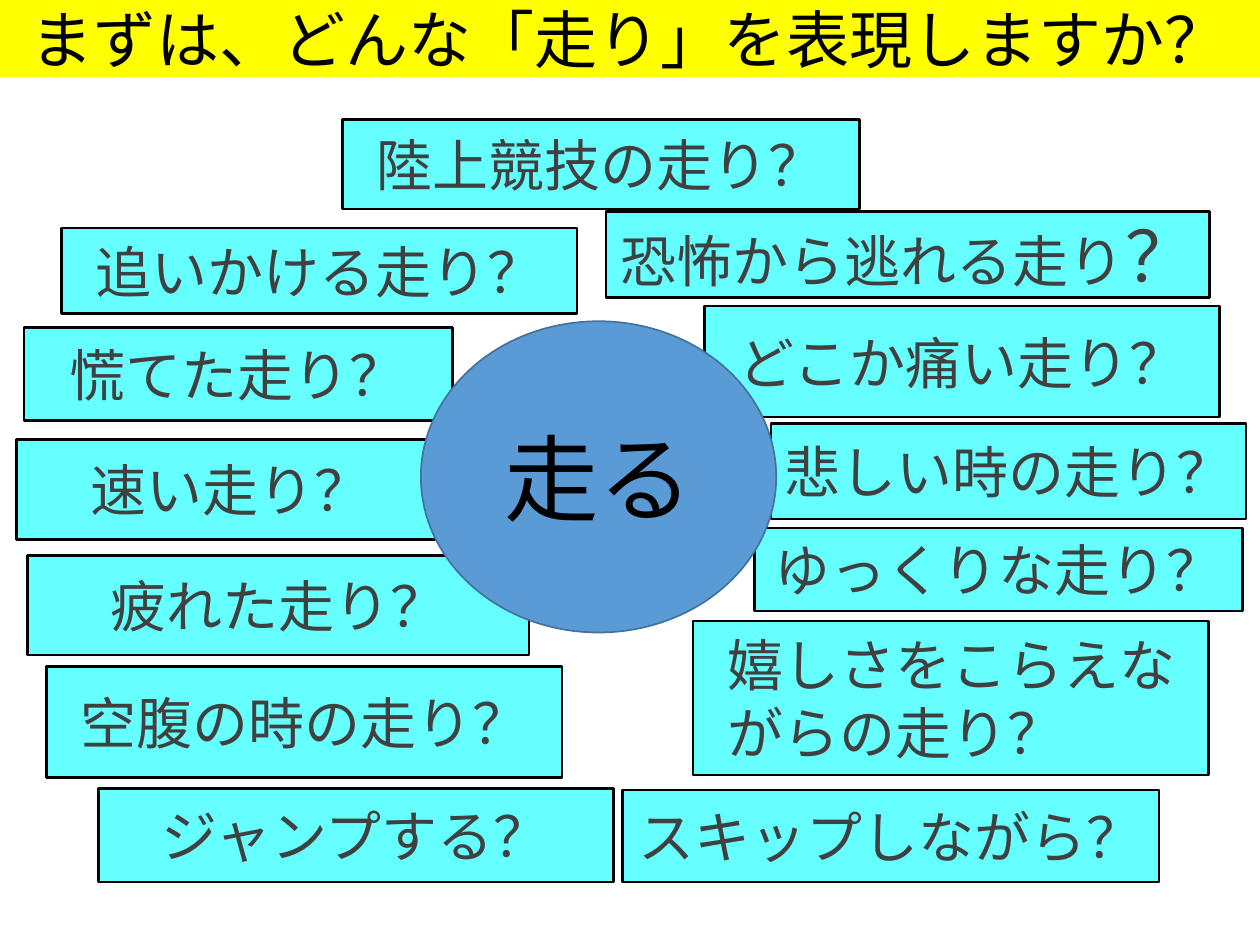
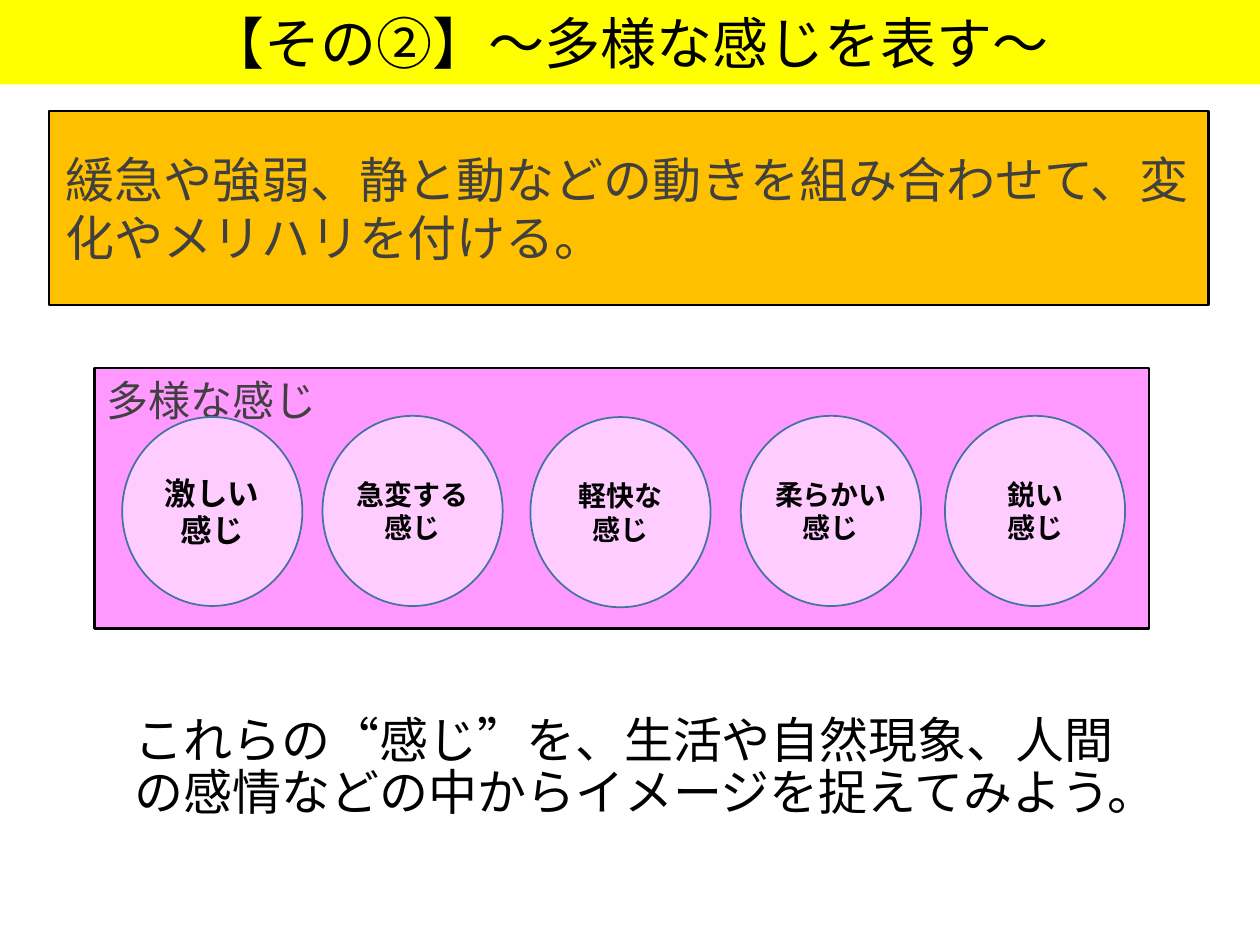
from lxml import etree
from pptx import Presentation
from pptx import util as u
from pptx.dml.color import RGBColor
from pptx.enum import shapes, text
from pptx.oxml.ns import qn

FONT = "Noto Sans CJK JP"
BLACK, GREY = "000000", "404040"
YELLOW, CYAN, BLUE, BLUE_LINE = "FFFF00", "66FFFF", "5B9BD5", "43739E"
ORANGE, PINK, PALE_PINK = "FFC000", "FF99FF", "FFCCFF"
RECT, OVAL = shapes.MSO_SHAPE.RECTANGLE, shapes.MSO_SHAPE.OVAL
LEFT, CENTER = text.PP_ALIGN.LEFT, text.PP_ALIGN.CENTER
TOP, MIDDLE = text.MSO_ANCHOR.TOP, text.MSO_ANCHOR.MIDDLE


def write(sp, paragraphs, size=32, color=GREY, bold=False, align=CENTER,
          anchor=MIDDLE, before=0, spacing=1.0, insets=(0.1, 0.05, 0.1, 0.05)):
    """Each paragraph is a string or a list of (string, size) runs."""
    tf = sp.text_frame
    tf.word_wrap, tf.auto_size = True, text.MSO_AUTO_SIZE.NONE
    tf.vertical_anchor = anchor
    (tf.margin_left, tf.margin_top,
     tf.margin_right, tf.margin_bottom) = [u.Inches(i) for i in insets]
    for i, runs in enumerate(paragraphs):
        p = tf.add_paragraph() if i else tf.paragraphs[0]
        p.alignment, p.line_spacing = align, spacing
        p.space_before = u.Pt(before)
        for words, run_size in [(runs, size)] if isinstance(runs, str) else runs:
            r = p.add_run()
            r.text = words
            r.font.name, r.font.size, r.font.bold = FONT, u.Pt(run_size), bold
            r.font.color.rgb = RGBColor.from_string(color)
            etree.SubElement(r._r.rPr, qn("a:ea"), typeface=FONT)


def draw(parent, kind, at, fill, line=BLACK, width=1.5):
    sp = parent.add_shape(kind, *[u.Inches(v) for v in at])
    sp.shadow.inherit = False
    sp.fill.solid()
    sp.fill.fore_color.rgb = RGBColor.from_string(fill)
    sp.line.color.rgb = RGBColor.from_string(line)
    sp.line.width = u.Pt(width)
    return sp


prs = Presentation()
prs.slide_width, prs.slide_height = u.Inches(10), u.Inches(7.5)

# Slides with their yellow title bands
slides = []
for layout, title, height, size in [
    (5, "まずは、どんな「走り」を表現しますか？", 0.61, 36),
    (1, "【その②】～多様な感じを表す～", 0.67, 32),
]:
    s = prs.slides.add_slide(prs.slide_layouts[layout])
    sp = s.shapes.title
    sp.left, sp.top = u.Inches(-0.02), u.Inches(0)
    sp.width, sp.height = u.Inches(10.02), u.Inches(height)
    sp.fill.solid()
    sp.fill.fore_color.rgb = RGBColor.from_string(YELLOW)
    write(sp, [title], size=size, color=BLACK, insets=(0.07, 0.04, 0.07, 0.04))
    slides.append(s)
running, feelings = slides

# Slide 1: ways of running around the central theme
for label, at in [
    ("陸上競技の走り？", (2.72, 0.95, 4.1, 0.71)),
    ([("恐怖から逃れる走り", 32), ("？", 40)], (4.81, 1.68, 4.79, 0.68)),
    ("追いかける走り？", (0.49, 1.81, 4.09, 0.68)),
    ("慌てた走り？", (0.19, 2.6, 3.4, 0.74)),
    ("悲しい時の走り？", (6.12, 3.36, 3.77, 0.76)),
    ("どこか痛い走り？", (5.59, 2.43, 4.09, 0.88)),
    ("速い走り？", (0.13, 3.49, 3.4, 0.79)),
    ("ゆっくりな走り？", (5.99, 4.19, 3.87, 0.66)),
    ("疲れた走り？", (0.22, 4.41, 3.98, 0.79)),
    ("ジャンプする？", (0.78, 6.26, 4.09, 0.74)),
    ("空腹の時の走り？", (0.37, 5.29, 4.09, 0.88)),
    ("スキップしながら？", (4.94, 6.27, 4.26, 0.73)),
]:
    write(draw(running.shapes, RECT, at, CYAN), [label], before=10,
          insets=(0.05, 0.05, 0.05, 0.05))

sp = draw(running.shapes, RECT, (5.5, 4.93, 4.09, 1.22), CYAN)
write(sp, ["嬉しさをこらえながらの走り？"], align=LEFT, before=10,
      insets=(0.27, 0.05, 0.05, 0.05))

sp = draw(running.shapes, OVAL, (3.34, 2.55, 2.82, 2.47), BLUE, BLUE_LINE, 1)
write(sp, ["走る"], size=54, color=BLACK)

# Slide 2: key point
sp = draw(feelings.shapes, RECT, (0.39, 0.88, 9.2, 1.54), ORANGE)
write(sp, ["緩急や強弱、静と動などの動きを組み合わせて、変化やメリハリを付ける。"],
      size=28, align=LEFT, before=10, insets=(0.13, 0.05, 0.05, 0.05))

# Slide 2: panel of feelings
panel = feelings.shapes.add_group_shape().shapes
sp = draw(panel, RECT, (0.75, 2.92, 8.37, 2.07), PINK)
write(sp, ["多様な感じ"], size=24, align=LEFT, anchor=TOP, before=10)

sp = draw(panel, OVAL, (0.97, 3.31, 1.43, 1.5), PALE_PINK, BLUE_LINE, 1)
write(sp, ["激しい感じ"], size=18, color=BLACK, bold=True)

for feeling, left, top in [("急変する", 2.56, 3.3), ("軽快な", 4.21, 3.31),
                           ("柔らかい", 5.88, 3.3), ("鋭い", 7.5, 3.3)]:
    sp = draw(panel, OVAL, (left, top, 1.43, 1.51), PALE_PINK, BLUE_LINE, 1)
    write(sp, [feeling, "感じ"], size=16, color=BLACK, bold=True,
          insets=(0, 0, 0, 0))

# Slide 2: closing prompt, without a bullet
sp = feelings.placeholders[1]
sp.left, sp.top = u.Inches(0.97), u.Inches(5.63)
sp.width, sp.height = u.Inches(8.06), u.Inches(1.23)
write(sp, ["これらの“感じ”を、生活や自然現象、人間の感情などの中からイメージを捉えてみよう。"],
      size=28, color=BLACK, align=LEFT, anchor=TOP, before=7.5, spacing=0.9)
pPr = sp.text_frame.paragraphs[0]._p.get_or_add_pPr()
pPr.set("marL", "0")
pPr.set("indent", "0")
etree.SubElement(pPr, qn("a:buNone"))

prs.save("out.pptx")
